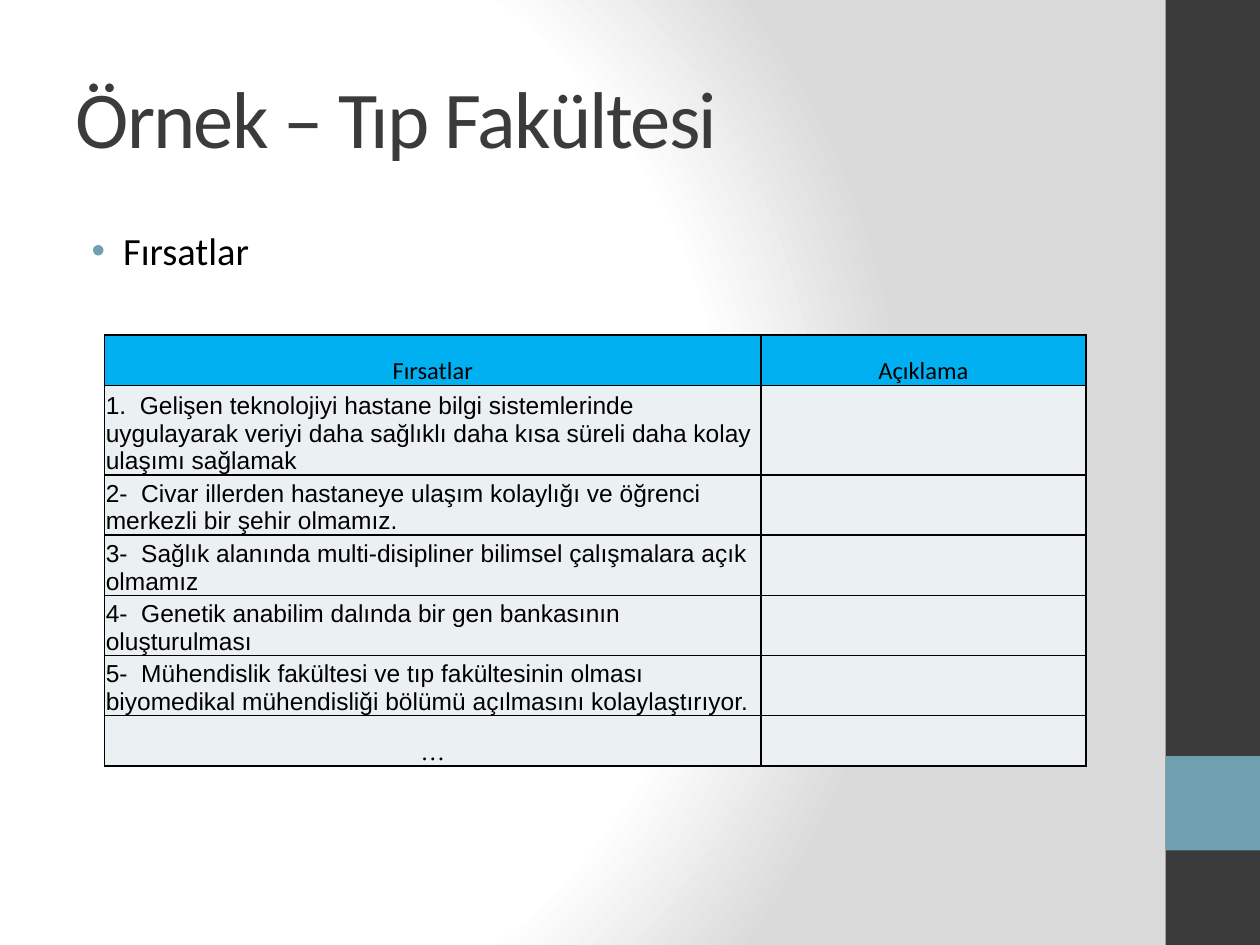
"""Build the slide on opportunities for a medical faculty."""
from pptx import Presentation
from pptx import util as u
from pptx.dml.color import RGBColor
from pptx.enum import shapes, text
from pptx.oxml import parse_xml
from pptx.oxml.ns import nsdecls, qn

HUES = {"dark": "3B3B3B", "teal": "6EA0B0", "blue": "00B0F0", "pale": "EBF0F2",
        "black": "000000", "white": "FFFFFF", "grey": "DADADA"}
ROWS = [
    ("Fırsatlar", "Açıklama"),
    ("1.  Gelişen teknolojiyi hastane bilgi sistemlerinde uygulayarak veriyi daha "
     "sağlıklı daha kısa süreli daha kolay ulaşımı sağlamak", ""),
    ("2-  Civar illerden hastaneye ulaşım kolaylığı ve öğrenci merkezli bir şehir olmamız.", ""),
    ("3-  Sağlık alanında multi-disipliner bilimsel çalışmalara açık olmamız", ""),
    ("4-  Genetik anabilim dalında bir gen bankasının oluşturulması", ""),
    ("5-  Mühendislik fakültesi ve tıp fakültesinin olması biyomedikal mühendisliği "
     "bölümü açılmasını kolaylaştırıyor.", ""),
    ("…", ""),
]
TALL = [0.4, 0.66, 0.44, 0.44, 0.44, 0.44, 0.4]
WIDE = [5.21, 2.58]


def style(para, face, size, hue):
    for run in para.runs:
        run.font.name = face
        run.font.size = u.Pt(size)
        run.font.color.rgb = RGBColor.from_string(HUES[hue])


deck = Presentation()
deck.slide_width, deck.slide_height = u.Inches(10), u.Inches(7.5)
W, H = deck.slide_width, deck.slide_height
slide = deck.slides.add_slide(deck.slide_layouts[5])

slide.background.fill.solid()
back = slide.element.find(".//" + qn("p:bgPr"))
stops = "".join(f'<a:gs pos="{pos}000"><a:srgbClr val="{HUES[hue]}"/></a:gs>'
                for pos, hue in [(0, "white"), (75, "white"), (100, "grey")])
back.replace(back[0], parse_xml(
    f'<a:gradFill {nsdecls("a")} rotWithShape="1"><a:gsLst>{stops}</a:gsLst>'
    '<a:path path="circle"><a:fillToRect l="20000" t="50000" r="100000" b="50000"/>'
    '</a:path></a:gradFill>'))

for top, tall, hue in [(0, 1, "dark"), (0.8, 0.1, "teal")]:
    bar = slide.shapes.add_shape(shapes.MSO_SHAPE.RECTANGLE, int(W * 0.925), int(H * top),
                                 int(W * 0.075), int(H * tall))
    bar.shadow.inherit = False
    bar.fill.solid()
    bar.fill.fore_color.rgb = RGBColor.from_string(HUES[hue])
    bar.line.fill.background()

title = slide.shapes.title
title.left, title.top = int(W * 0.05), int(H * 0.04)
title.width, title.height = int(W * 0.833), int(H / 6)
frame = title.text_frame
frame.text = "Örnek – Tıp Fakültesi"
frame.vertical_anchor = text.MSO_ANCHOR.MIDDLE
head = frame.paragraphs[0]
head.alignment = text.PP_ALIGN.LEFT
style(head, "Calibri", 46, "dark")
head.runs[0].font._element.set("spc", "-100")

body = slide.shapes.add_textbox(title.left, u.Inches(1.75), title.width, int(H * 0.7))
frame = body.text_frame
frame.word_wrap = True
frame.text = "Fırsatlar"
item = frame.paragraphs[0]
item.space_before = u.Pt(4.4)
style(item, "Calibri", 22, "black")
props = item._p.get_or_add_pPr()
props.set("marL", str(u.Inches(0.38)))
props.set("indent", str(u.Inches(-0.25)))
for xml in (f'<a:buClr {nsdecls("a")}><a:srgbClr val="{HUES["teal"]}"/></a:buClr>',
            f'<a:buFont {nsdecls("a")} typeface="Arial"/>',
            f'<a:buChar {nsdecls("a")} char="•"/>'):
    props.append(parse_xml(xml))

table = slide.shapes.add_table(len(ROWS), len(WIDE), u.Inches(0.83), u.Inches(2.66),
                               u.Inches(sum(WIDE)), u.Inches(sum(TALL))).table
for col, wide in zip(table.columns, WIDE):
    col.width = u.Inches(wide)
for r, (row, tall) in enumerate(zip(ROWS, TALL)):
    table.rows[r].height = u.Inches(tall)
    first, last = r == 0, r == len(ROWS) - 1
    for c, words in enumerate(row):
        cell = table.cell(r, c)
        cell.margin_left = cell.margin_right = cell.margin_top = u.Inches(0.01)
        cell.margin_bottom = 0
        cell.vertical_anchor = text.MSO_ANCHOR.BOTTOM
        if words:
            cell.text_frame.text = words
            para = cell.text_frame.paragraphs[0]
            para.alignment = text.PP_ALIGN.CENTER if first or last else text.PP_ALIGN.LEFT
            style(para, "Calibri" if first else "Times New Roman" if last else "Arial",
                  14, "black")
            para.runs[0].font.bold = False
        cell.fill.solid()
        cell.fill.fore_color.rgb = RGBColor.from_string(HUES["blue" if first else "pale"])
        for at, side in enumerate("LRTB"):
            cell._tc.get_or_add_tcPr().insert(at, parse_xml(
                f'<a:ln{side} {nsdecls("a")} w="12700"><a:solidFill>'
                f'<a:srgbClr val="{HUES["black"]}"/></a:solidFill></a:ln{side}>'))

deck.save("out.pptx")
